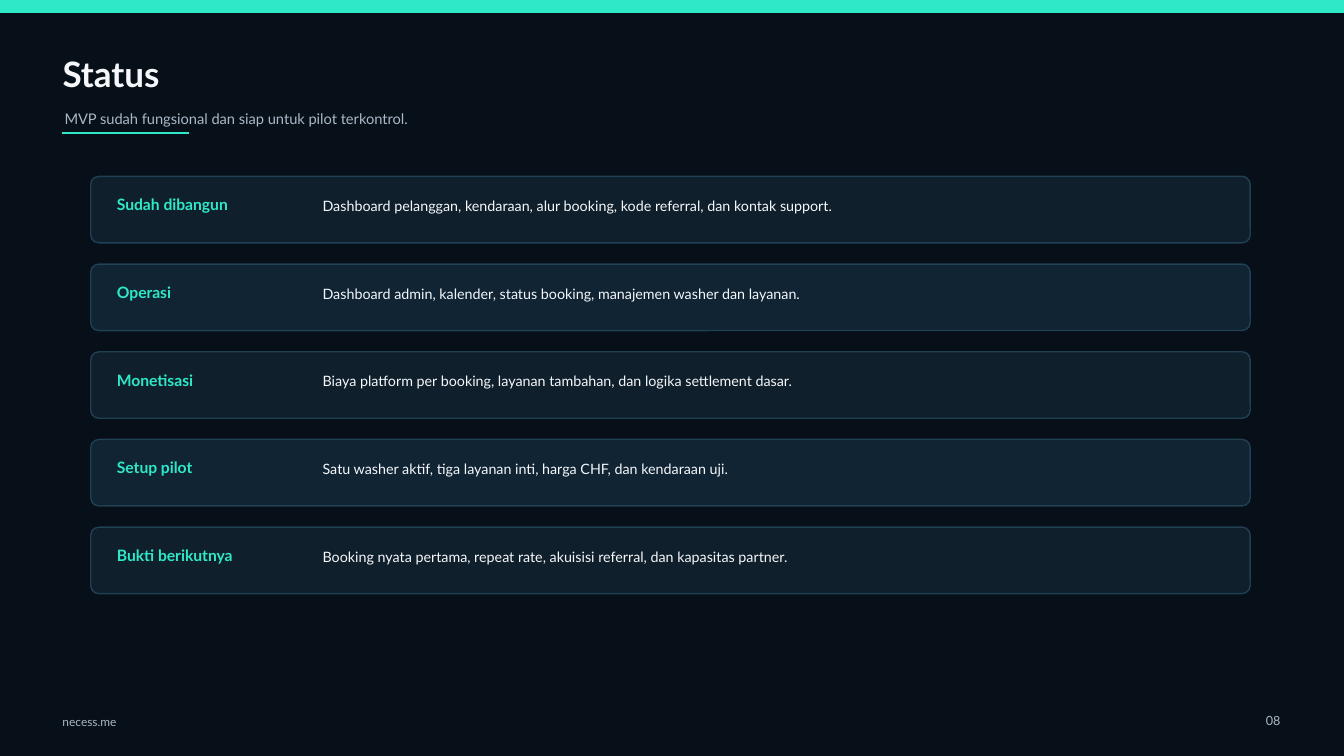
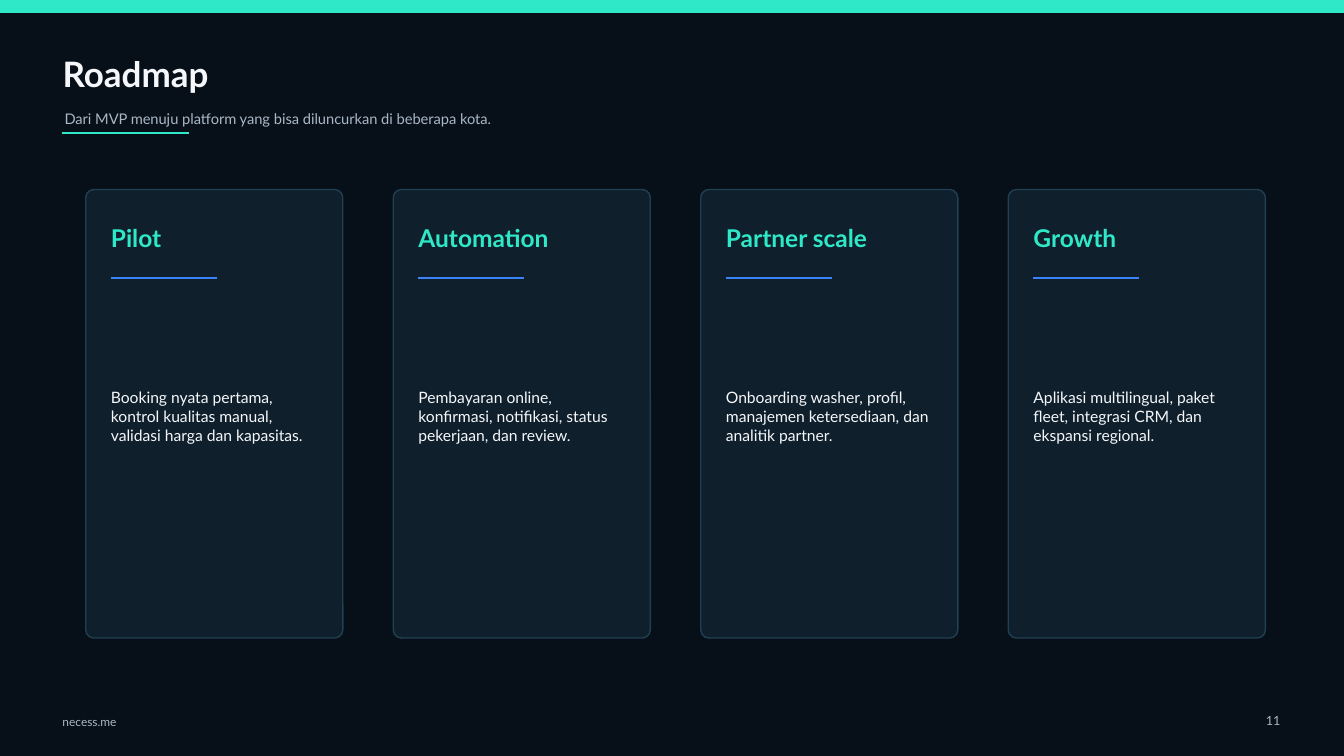
from lxml import etree
from pptx import Presentation
from pptx.dml.color import RGBColor
from pptx.enum.shapes import MSO_CONNECTOR, MSO_SHAPE
from pptx.enum.text import MSO_ANCHOR, MSO_AUTO_SIZE, PP_ALIGN
from pptx.oxml.ns import qn
from pptx.util import Inches, Pt

STATUS = {
    "title": "Status",
    "subtitle": "MVP sudah fungsional dan siap untuk pilot terkontrol.",
    "page": "08",
    "items": [
        ("Sudah dibangun", "Dashboard pelanggan, kendaraan, alur booking, kode referral, dan kontak support."),
        ("Operasi", "Dashboard admin, kalender, status booking, manajemen washer dan layanan."),
        ("Monetisasi", "Biaya platform per booking, layanan tambahan, dan logika settlement dasar."),
        ("Setup pilot", "Satu washer aktif, tiga layanan inti, harga CHF, dan kendaraan uji."),
        ("Bukti berikutnya", "Booking nyata pertama, repeat rate, akuisisi referral, dan kapasitas partner."),
    ],
}
ROADMAP = {
    "title": "Roadmap",
    "subtitle": "Dari MVP menuju platform yang bisa diluncurkan di beberapa kota.",
    "page": "11",
    "items": [
        ("Pilot", "Booking nyata pertama, kontrol kualitas manual, validasi harga dan kapasitas."),
        ("Automation", "Pembayaran online, konfirmasi, notifikasi, status pekerjaan, dan review."),
        ("Partner scale", "Onboarding washer, profil, manajemen ketersediaan, dan analitik partner."),
        ("Growth", "Aplikasi multilingual, paket fleet, integrasi CRM, dan ekspansi regional."),
    ],
}
FOOTER = "necess.me"

FONT = "Lato"
BACKGROUND, PANEL, PANEL_ALT, BORDER = "071018", "0F1F2C", "102434", "25475C"
MINT, BLUE, WHITE, MUTED = "2EE8C8", "3B82F6", "F5F7FA", "A9B7C6"
WIDTH, HEIGHT = 13.33, 7.5
CORNER = 0.08  # corner radius in inches


def color(hex_code):
    return RGBColor.from_string(hex_code)


def inches(*lengths):
    return [Inches(length) for length in lengths]


def write(slide, text, place, size, ink=WHITE, bold=False, align=PP_ALIGN.LEFT, holder=None):
    """Put text at place, in the given placeholder or in a new text box."""
    box = holder or slide.shapes.add_textbox(*inches(*place))
    box.left, box.top, box.width, box.height = inches(*place)
    frame = box.text_frame
    frame.text = text
    frame.word_wrap = True
    frame.auto_size = MSO_AUTO_SIZE.NONE
    frame.vertical_anchor = MSO_ANCHOR.MIDDLE
    frame.margin_left = frame.margin_right = frame.margin_top = frame.margin_bottom = 0
    paragraph = frame.paragraphs[0]
    paragraph.alignment = align
    font = paragraph.runs[0].font
    font.name, font.size, font.bold = FONT, Pt(size), bold
    font.color.rgb = color(ink)


def add_box(slide, kind, place, fill, border):
    box = slide.shapes.add_shape(kind, *inches(*place))
    box.shadow.inherit = False
    box.fill.solid()
    box.fill.fore_color.rgb = color(fill)
    box.line.color.rgb = color(border)
    box.line.width = Pt(1)
    return box


def add_panel(slide, place, fill=PANEL):
    """Rounded panel with a slightly transparent border."""
    panel = add_box(slide, MSO_SHAPE.ROUNDED_RECTANGLE, place, fill, BORDER)
    panel.adjustments[0] = CORNER / min(place[2:])
    border = panel.line.fill._xPr.find(qn("a:solidFill"))[0]
    etree.SubElement(border, qn("a:alpha"), val="85000")


def add_rule(slide, left, top, length, ink, weight):
    rule = slide.shapes.add_connector(
        MSO_CONNECTOR.STRAIGHT, *inches(left, top, left + length, top))
    rule.line.color.rgb = color(ink)
    rule.line.width = Pt(weight)
    etree.SubElement(rule._element.spPr, qn("a:effectLst"))


def start_slide(prs, content):
    """Add a slide with the shared band, title, subtitle and footer."""
    slide = prs.slides.add_slide(prs.slide_layouts.get_by_name("Title Only"))
    add_box(slide, MSO_SHAPE.RECTANGLE, (0, 0, WIDTH, 0.12), MINT, MINT)
    write(slide, content["title"], (0.62, 0.45, 8.8, 0.55), 25, bold=True, holder=slide.shapes.title)
    write(slide, content["subtitle"], (0.64, 1, 9.2, 0.36), 10.5, MUTED)
    add_rule(slide, 0.62, 1.32, 1.25, MINT, 2)
    write(slide, FOOTER, (0.62, 7.05, 1.4, 0.22), 8.5, MUTED)
    write(slide, content["page"], (12.25, 7.02, 0.45, 0.25), 9, MUTED, align=PP_ALIGN.RIGHT)
    return slide


def build_status(prs):
    slide = start_slide(prs, STATUS)
    for row, (label, detail) in enumerate(STATUS["items"]):
        top = 1.75 + row * 0.87
        add_panel(slide, (0.9, top, 11.5, 0.66), PANEL_ALT if row % 2 else PANEL)
        write(slide, label, (1.16, top + 0.18, 2.1, 0.2), 11.2, MINT, bold=True)
        write(slide, detail, (3.2, top + 0.17, 8.6, 0.24), 10.2)


def build_roadmap(prs):
    slide = start_slide(prs, ROADMAP)
    for column, (phase, detail) in enumerate(ROADMAP["items"]):
        left = 0.85 + column * 3.05
        inner = left + 0.25
        add_panel(slide, (left, 1.88, 2.55, 4.45))
        write(slide, phase, (inner, 2.2, 2.05, 0.32), 17.5, MINT, bold=True)
        add_rule(slide, inner, 2.76, 1.05, BLUE, 1.5)
        write(slide, detail, (inner, 3.08, 2.02, 2.1), 11.2)


def main():
    prs = Presentation()
    prs.slide_width, prs.slide_height = inches(WIDTH, HEIGHT)
    backdrop = prs.slide_master.background.fill
    backdrop.solid()
    backdrop.fore_color.rgb = color(BACKGROUND)
    build_status(prs)
    build_roadmap(prs)
    prs.save("out.pptx")


if __name__ == "__main__":
    main()
